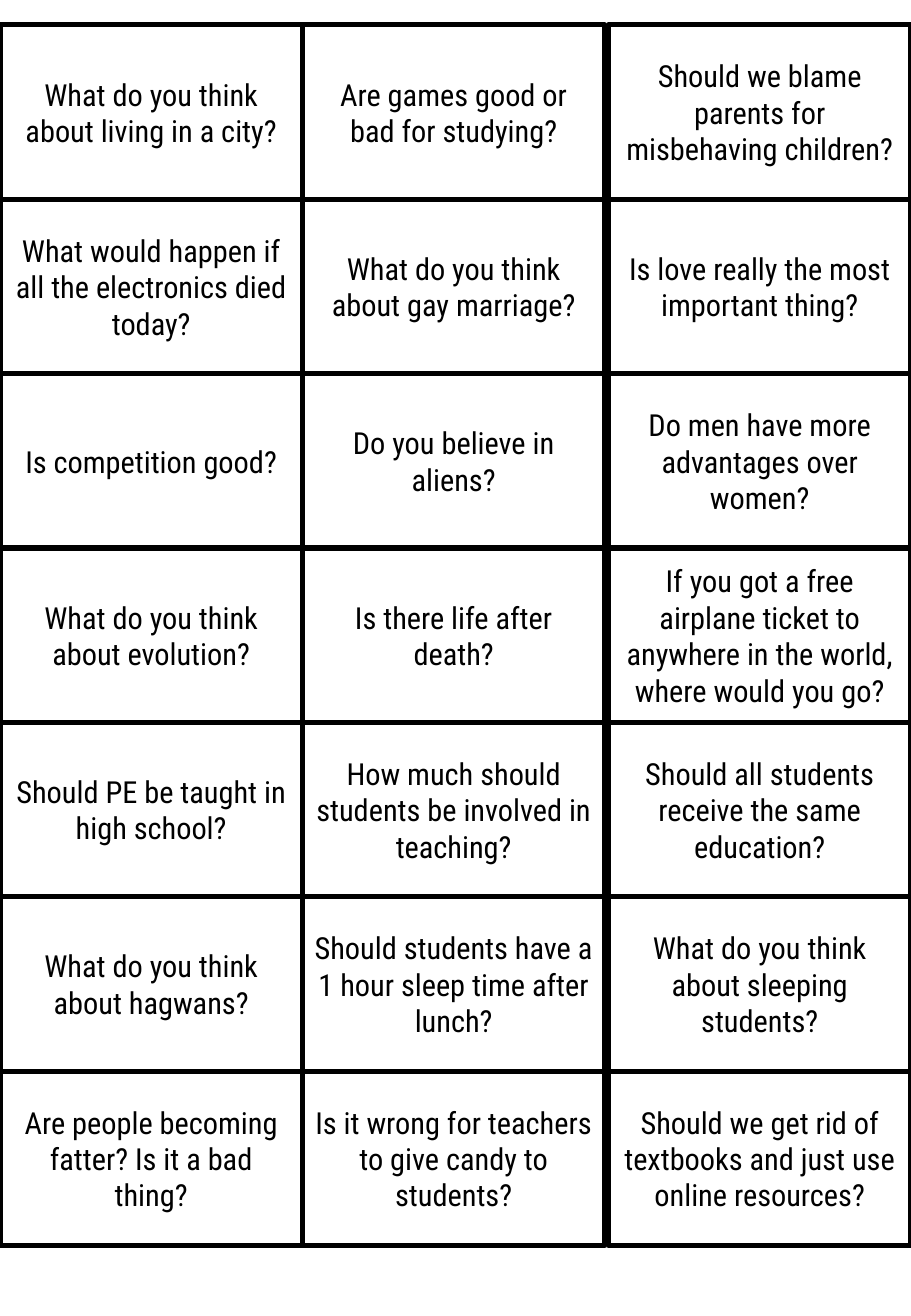
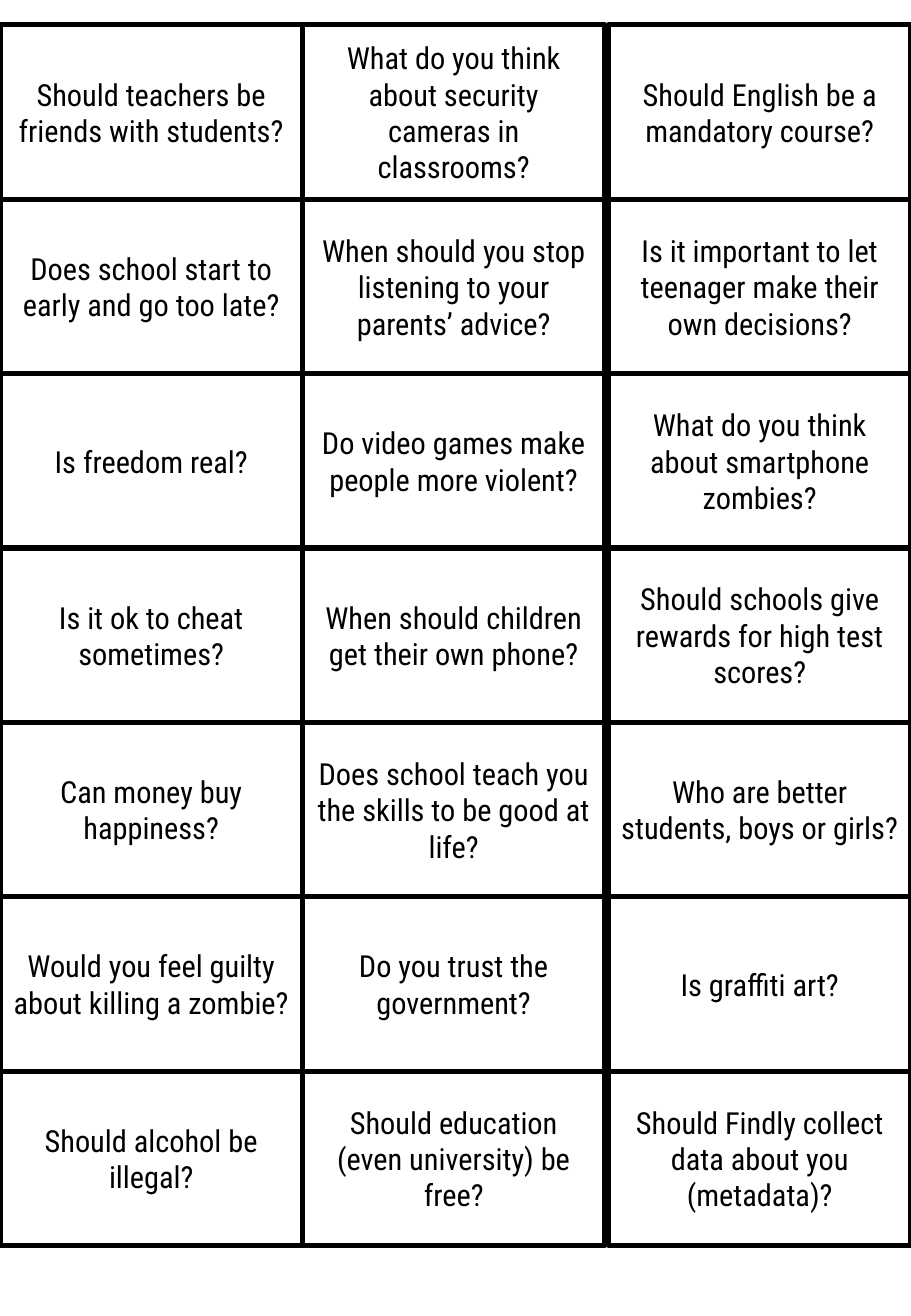
from dataclasses import dataclass

from pptx import Presentation
from pptx.dml.color import RGBColor
from pptx.enum.shapes import MSO_SHAPE as SHAPE
from pptx.enum.text import MSO_ANCHOR as ANCHOR, PP_ALIGN as ALIGN
from pptx.util import Emu, Pt

# Scale: 200 px to the inch
EMU_PER_PX = 4572

# Page and card grid, in px
PAGE_W, PAGE_H = 1500, 2166
CARD_W, CARD_H = 498, 287
TOP = 41
COLUMNS = (0, CARD_W, PAGE_W - CARD_W)

# Shared style
WHITE, BLACK = "FFFFFF", "000000"
BORDER = Pt(3)
FONT = {"name": "Roboto Condensed", "size": Pt(18)}
FRAME = {"word_wrap": True, "vertical_anchor": ANCHOR.MIDDLE}

# Questions, row by row
PAGES = (
    (
        "What do you think about living in a city?",
        "Are games good or bad for studying?",
        "Should we blame parents for misbehaving children?",
        "What would happen if all the electronics died today?",
        "What do you think about gay marriage?",
        "Is love really the most important thing?",
        "Is competition good?",
        "Do you believe in aliens?",
        "Do men have more advantages over women?",
        "What do you think about evolution?",
        "Is there life after death?",
        "If you got a free airplane ticket to anywhere in the world, where would you go?",
        "Should PE be taught in high school?",
        "How much should students be involved in teaching?",
        "Should all students receive the same education?",
        "What do you think about hagwans?",
        "Should students have a 1 hour sleep time after lunch?",
        "What do you think about sleeping students?",
        "Are people becoming fatter? Is it a bad thing?",
        "Is it wrong for teachers to give candy to students?",
        "Should we get rid of textbooks and just use online resources?",
    ),
    (
        "Should teachers be friends with students?",
        "What do you think about security cameras in classrooms?",
        "Should English be a mandatory course?",
        "Does school start to early and go too late?",
        "When should you stop listening to your parents’ advice?",
        "Is it important to let teenager make their own decisions?",
        "Is freedom real?",
        "Do video games make people more violent?",
        "What do you think about smartphone zombies?",
        "Is it ok to cheat sometimes?",
        "When should children get their own phone?",
        "Should schools give rewards for high test scores?",
        "Can money buy happiness?",
        "Does school teach you the skills to be good at life?",
        "Who are better students, boys or girls?",
        "Would you feel guilty about killing a zombie?",
        "Do you trust the government?",
        "Is graffiti art?",
        "Should alcohol be illegal?",
        "Should education (even university) be free?",
        "Should Findly collect data about you (metadata)?",
    ),
)


@dataclass(frozen=True)
class Card:
    question: str
    left: int
    top: int


def px(length: int) -> Emu:
    return Emu(length * EMU_PER_PX)


def rgb(value: str) -> RGBColor:
    return RGBColor.from_string(value)


def apply(target: object, values: dict) -> None:
    for name, value in values.items():
        setattr(target, name, value)


def lay_out(questions: tuple[str, ...]) -> list[Card]:
    """Place the questions on the grid, left to right and top to bottom."""
    cards = []
    for i, question in enumerate(questions):
        row, col = divmod(i, len(COLUMNS))
        cards.append(Card(question, COLUMNS[col], TOP + row * CARD_H))
    return cards


def draw_card(s, card: Card) -> None:
    # Box
    sp = s.shapes.add_shape(
        SHAPE.RECTANGLE, px(card.left), px(card.top), px(CARD_W), px(CARD_H)
    )
    sp.shadow.inherit = False
    sp.fill.solid()
    sp.fill.fore_color.rgb = rgb(WHITE)
    sp.line.color.rgb = rgb(BLACK)
    sp.line.width = BORDER

    # Question
    tf = sp.text_frame
    apply(tf, FRAME)
    p = tf.paragraphs[0]
    p.alignment = ALIGN.CENTER
    r = p.add_run()
    r.text = card.question
    apply(r.font, FONT)
    r.font.color.rgb = rgb(BLACK)


def main() -> None:
    prs = Presentation()
    prs.slide_width, prs.slide_height = px(PAGE_W), px(PAGE_H)
    blank = prs.slide_layouts[6]
    for questions in PAGES:
        s = prs.slides.add_slide(blank)
        for card in lay_out(questions):
            draw_card(s, card)
    prs.save("out.pptx")


if __name__ == "__main__":
    main()
